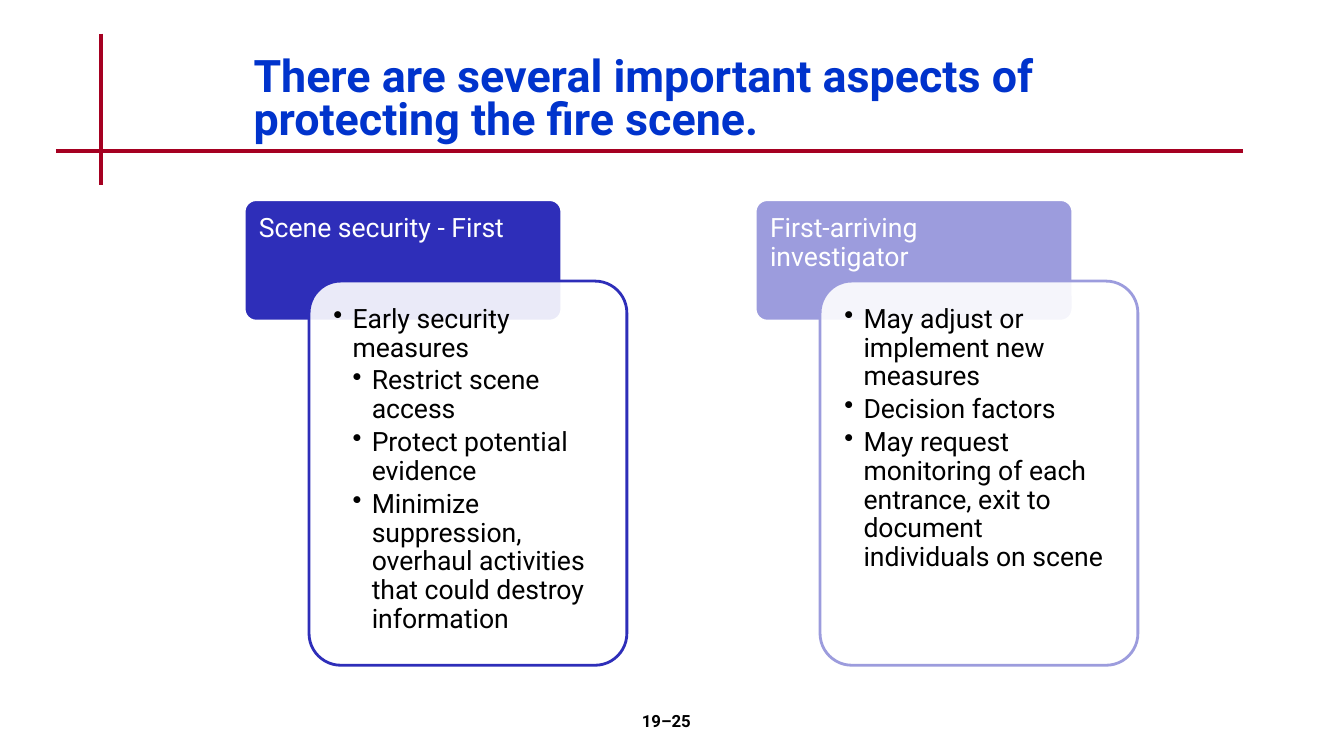
import pptx
import pptx.util
import pptx.dml.color
import pptx.enum.shapes
import pptx.enum.text
import pptx.oxml.ns
import lxml.etree

Pt = pptx.util.Pt
RGB = pptx.dml.color.RGBColor
TOP = pptx.enum.text.MSO_ANCHOR.TOP
MID = pptx.enum.text.MSO_ANCHOR.MIDDLE
LEFT = pptx.enum.text.PP_ALIGN.LEFT
CENTER = pptx.enum.text.PP_ALIGN.CENTER

HUES = {"rule": "A50021", "title": "0033CC", "text": "000000",
        "white": "FFFFFF", "first": "2E2EB9", "next": "9C9CDD"}

TITLE = "There are several important aspects of protecting the fire scene."
PAGE = "19–25"
RULES = [(72, 24, 72, 132), (40, 108, 888, 108)]
# Each panel: colour, heading, then points as (level, text)
PANELS = [
    ("first", "Scene security - First", [
        (1, "Early security measures"),
        (2, "Restrict scene access"),
        (2, "Protect potential evidence"),
        (2, "Minimize suppression, overhaul activities that could destroy information"),
    ]),
    ("next", "First-arriving investigator", [
        (1, "May adjust or implement new measures"),
        (1, "Decision factors"),
        (1, "May request monitoring of each entrance, exit to document individuals on scene"),
    ]),
]

LEFT_X, HEAD_Y, STEP = 174.4, 142.6, 365
WIDE, HEAD_H, BODY_H = 227, 86.8, 274.4
SHIFT_X, SHIFT_Y = 46.4, 58.2
PAD, INDENT = 6.7, 13.7
INSET = 10.64

FORMS = {
    "title": ({"size": Pt(32), "bold": True}, "title", {"line_spacing": 0.8, "alignment": LEFT}),
    "page": ({"size": Pt(12), "bold": True}, "text", {"alignment": CENTER}),
    "head": ({"size": Pt(19)}, "white", {"line_spacing": 0.9, "alignment": LEFT}),
    "body": ({"size": Pt(19)}, "text",
             {"line_spacing": 0.9, "alignment": LEFT, "space_after": Pt(3)}),
}


def tag(node, name, **vals):
    return lxml.etree.SubElement(node, pptx.oxml.ns.qn(name), **vals)


def assign(item, vals):
    for name, val in vals.items():
        setattr(item, name, val)


def rgb(hue):
    return RGB.from_string(HUES[hue])


def write(slide, area, lines, form, inset=(7.2, 3.6, 7.2, 3.6), anchor=TOP):
    """Add a text box; lines are (level, text), and level 0 has no bullet."""
    frame = slide.shapes.add_textbox(*map(Pt, area)).text_frame
    sides = ("margin_left", "margin_top", "margin_right", "margin_bottom")
    assign(frame, dict(zip(sides, map(Pt, inset))))
    assign(frame, {"word_wrap": True, "vertical_anchor": anchor})
    font, hue, layout = FORMS[form]
    for i, (level, text) in enumerate(lines):
        para = frame.add_paragraph() if i else frame.paragraphs[0]
        assign(para, layout)
        if level:
            props = para._p.get_or_add_pPr()
            props.set("marL", str(Pt(level * INDENT)))
            props.set("indent", str(-Pt(INDENT)))
            tag(props, "a:buChar", char="•")
        run = para.add_run()
        run.text = text
        assign(run.font, font)
        run.font.name = "Roboto"
        run.font.color.rgb = rgb(hue)


def card(slide, area, fill, edge, alpha=None):
    """Add a rounded panel; alpha is its opacity in percent."""
    kind = pptx.enum.shapes.MSO_SHAPE.ROUNDED_RECTANGLE
    shape = slide.shapes.add_shape(kind, *map(Pt, area))
    shape.shadow.inherit = False
    shape.adjustments[0] = 0.1
    shape.fill.solid()
    shape.fill.fore_color.rgb = rgb(fill)
    shape.line.color.rgb = rgb(edge)
    shape.line.width = Pt(2)
    if alpha:
        solid = shape._element.spPr.find(pptx.oxml.ns.qn("a:solidFill"))
        tag(solid[0], "a:alpha", val=str(alpha * 1000))


def panel(slide, x, hue, head, points):
    card(slide, (x, HEAD_Y, WIDE, HEAD_H), hue, "white")
    write(slide, (x, HEAD_Y, WIDE, SHIFT_Y), [(0, head)], "head",
          (INSET, INSET, INSET, 5.7))
    x, y = x + SHIFT_X, HEAD_Y + SHIFT_Y
    card(slide, (x, y, WIDE, BODY_H), "white", hue, 90)
    area = (x + PAD, y + PAD, WIDE - 2 * PAD, BODY_H - 2 * PAD)
    write(slide, area, points, "body", (INSET,) * 4)


def main():
    deck = pptx.Presentation()
    assign(deck, {"slide_width": Pt(960), "slide_height": Pt(540)})
    slide = deck.slides.add_slide(deck.slide_layouts[6])
    for ends in RULES:
        straight = pptx.enum.shapes.MSO_CONNECTOR.STRAIGHT
        rule = slide.shapes.add_connector(straight, *map(Pt, ends))
        rule.line.color.rgb = rgb("rule")
        rule.line.width = Pt(3)
        tag(rule._element.spPr, "a:effectLst")
    write(slide, (174, 36, 650, 72), [(0, TITLE)], "title", anchor=MID)
    write(slide, (376, 504, 200, 36), [(0, PAGE)], "page")
    for i, (hue, head, points) in enumerate(PANELS):
        panel(slide, LEFT_X + i * STEP, hue, head, points)
    deck.save("out.pptx")


if __name__ == "__main__":
    main()
